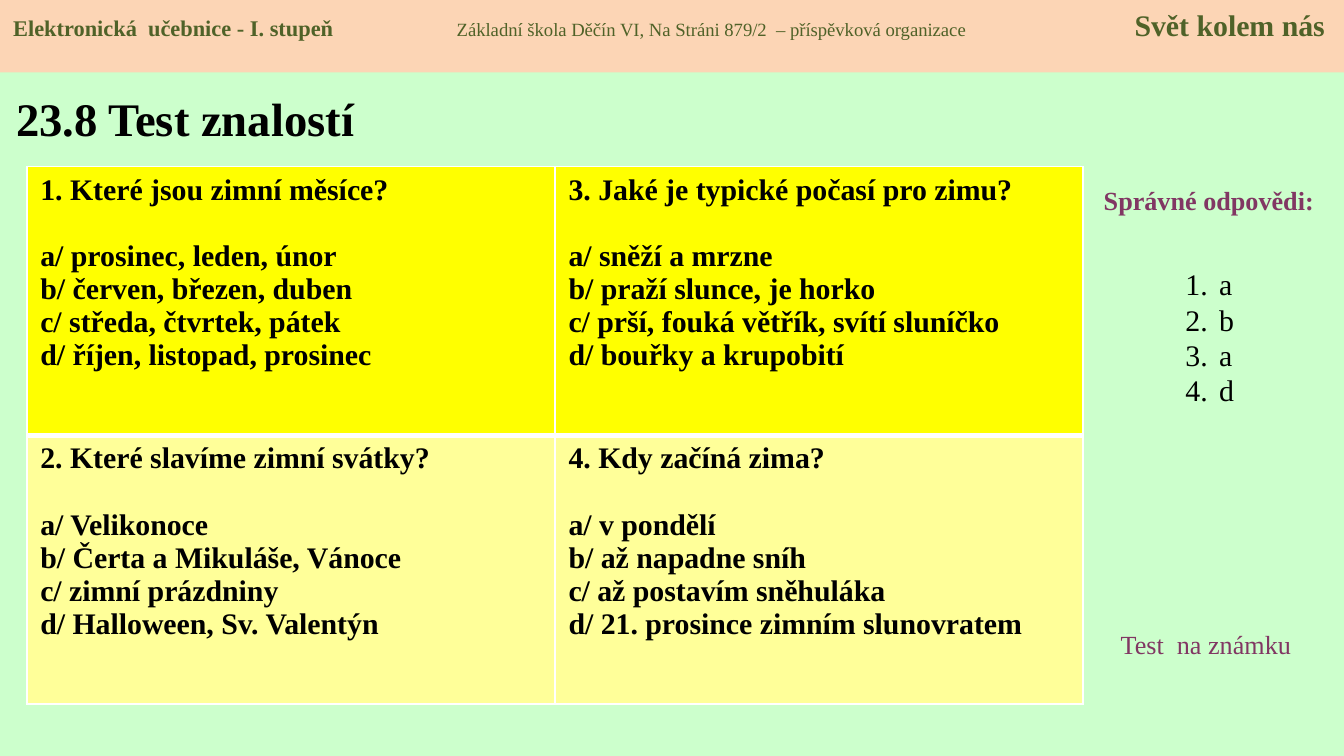
import dataclasses

import lxml.etree
import pptx
import pptx.dml.color
import pptx.enum.shapes
import pptx.enum.text
import pptx.oxml.ns
import pptx.util

Inches = pptx.util.Inches
Pt = pptx.util.Pt
Align = pptx.enum.text.PP_ALIGN
Anchor = pptx.enum.text.MSO_ANCHOR


@dataclasses.dataclass
class Theme:
    font: str = "Times New Roman"
    back: str = "CCFFCC"
    band: str = "FCD5B5"
    olive: str = "4F6228"
    plum: str = "813763"
    ink: str = "000000"
    line: str = "FFFFFF"
    rows: tuple = ("FFFF00", "FFFF99")
    title: float = 25
    body: float = 16
    label: float = 14
    head: float = 12
    small: float = 10


def rgb(code):
    return pptx.dml.color.RGBColor.from_string(code)


def add(parent, tag, **attrs):
    node = lxml.etree.SubElement(parent, pptx.oxml.ns.qn(tag))
    for key, value in attrs.items():
        node.set(key, str(value))
    return node


class Page:
    def __init__(self, deck, theme):
        self.theme = theme
        self.slide = deck.slides.add_slide(deck.slide_layouts[1])
        fill = self.slide.background.fill
        fill.solid()
        fill.fore_color.rgb = rgb(theme.back)

    def style(self, run, size, color, bold=False):
        font = run.font
        font.name = self.theme.font
        font.size = Pt(size)
        font.bold = bold
        font.color.rgb = rgb(color)

    def place(self, shape, box):
        shape.left, shape.top, shape.width, shape.height = map(Inches, box)
        shape.text_frame.auto_size = pptx.enum.text.MSO_AUTO_SIZE.NONE

    def title(self, text, box):
        shape = self.slide.shapes.title
        self.place(shape, box)
        frame = shape.text_frame
        frame.vertical_anchor = Anchor.MIDDLE
        frame.text = text
        para = frame.paragraphs[0]
        para.alignment = Align.LEFT
        self.style(para.runs[0], self.theme.title, self.theme.ink, True)

    def answers(self, items, box):
        shape = self.slide.placeholders[1]
        self.place(shape, box)
        frame = shape.text_frame
        frame.margin_top = Inches(0.33)
        frame.text = "\n".join(items)
        for para in frame.paragraphs:
            props = para._p.get_or_add_pPr()
            props.set("marL", str(Inches(0.25)))
            props.set("indent", str(-Inches(0.25)))
            add(props, "a:buFont", typeface=self.theme.font)
            add(props, "a:buAutoNum", type="arabicPeriod")
            para.space_before = Pt(0)
            para.line_spacing = Pt(19)
            self.style(para.runs[0], self.theme.body, self.theme.ink)

    def label(self, text, box, bold=False, align=Align.LEFT):
        shape = self.slide.shapes.add_textbox(*map(Inches, box))
        frame = shape.text_frame
        frame.word_wrap = True
        frame.text = text
        para = frame.paragraphs[0]
        para.alignment = align
        self.style(para.runs[0], self.theme.label, self.theme.plum, bold)

    def header(self, parts, tabs, box):
        shape = self.slide.shapes.add_shape(
            pptx.enum.shapes.MSO_SHAPE.RECTANGLE, *map(Inches, box))
        shape.shadow.inherit = False
        shape.fill.solid()
        shape.fill.fore_color.rgb = rgb(self.theme.band)
        shape.line.fill.background()
        frame = shape.text_frame
        frame.word_wrap = True
        frame.vertical_anchor = Anchor.TOP
        para = frame.paragraphs[0]
        para.alignment = Align.LEFT
        stops = add(para._p.get_or_add_pPr(), "a:tabLst")
        for pos, side in tabs:
            add(stops, "a:tab", pos=Inches(pos), algn=side)
        for text, size, bold in parts:
            run = para.add_run()
            run.text = text
            self.style(run, size, self.theme.olive, bold)

    def edges(self, cell, widths):
        props = cell._tc.get_or_add_tcPr()
        for spot, (side, width) in enumerate(widths.items()):
            line = add(props, "a:ln" + side, w=Pt(width))
            add(add(line, "a:solidFill"), "a:srgbClr", val=self.theme.line)
            props.insert(spot, line)

    def quiz(self, grid, box):
        table = self.slide.shapes.add_table(
            len(grid), len(grid[0]), *map(Inches, box)).table
        for r, row in enumerate(grid):
            for c, lines in enumerate(row):
                cell = table.cell(r, c)
                cell.fill.solid()
                cell.fill.fore_color.rgb = rgb(self.theme.rows[r])
                self.edges(cell, {"L": 1, "R": 1, "T": 3 if r else 1,
                                  "B": 1 if r else 3})
                cell.text_frame.text = "\n".join(lines)
                paras = cell.text_frame.paragraphs
                paras[1].space_before = Pt(17.7)
                for para in paras:
                    self.style(para.runs[0], self.theme.body,
                               self.theme.ink, True)


def main():
    deck = pptx.Presentation()
    deck.slide_width = Inches(10)
    deck.slide_height = Inches(10 * 9 / 16)
    theme = Theme()
    page = Page(deck, theme)
    page.title("23.8 Test znalostí", (0.02, 0.55, 3.19, 0.65))
    page.label("Správné odpovědi:", (8.05, 1.32, 1.89, 0.34), True, Align.CENTER)
    page.quiz([
        [["1. Které jsou zimní měsíce?", "a/ prosinec, leden, únor",
          "b/ červen, březen, duben", "c/ středa, čtvrtek, pátek",
          "d/ říjen, listopad, prosinec"],
         ["3. Jaké je typické počasí pro zimu?", "a/ sněží a mrzne",
          "b/ praží slunce, je horko", "c/ prší, fouká větřík, svítí sluníčko",
          "d/ bouřky a krupobití"]],
        [["2. Které slavíme zimní svátky?", "a/ Velikonoce",
          "b/ Čerta a Mikuláše, Vánoce", "c/ zimní prázdniny",
          "d/ Halloween, Sv. Valentýn"],
         ["4. Kdy začíná zima?", "a/ v pondělí", "b/ až napadne sníh",
          "c/ až postavím sněhuláka", "d/ 21. prosince zimním slunovratem"]],
    ], (0.2, 1.24, 7.86, 4))
    page.answers(["a", "b", "a", "d"], (8.72, 1.65, 0.55, 1.99))
    page.label("Test  na známku", (8.24, 4.63, 1.57, 0.34))
    page.header([
        ("Elektronická  učebnice - I. stupeň\t", theme.head, True),
        ("Základní škola Děčín VI, Na Stráni 879/2  – příspěvková organizace\t",
         theme.small, False),
        ("Svět kolem nás", theme.body, True),
    ], [(3.3, "l"), (9.76, "r")], (0, 0, 10, 0.54))
    deck.save("out.pptx")


if __name__ == "__main__":
    main()
